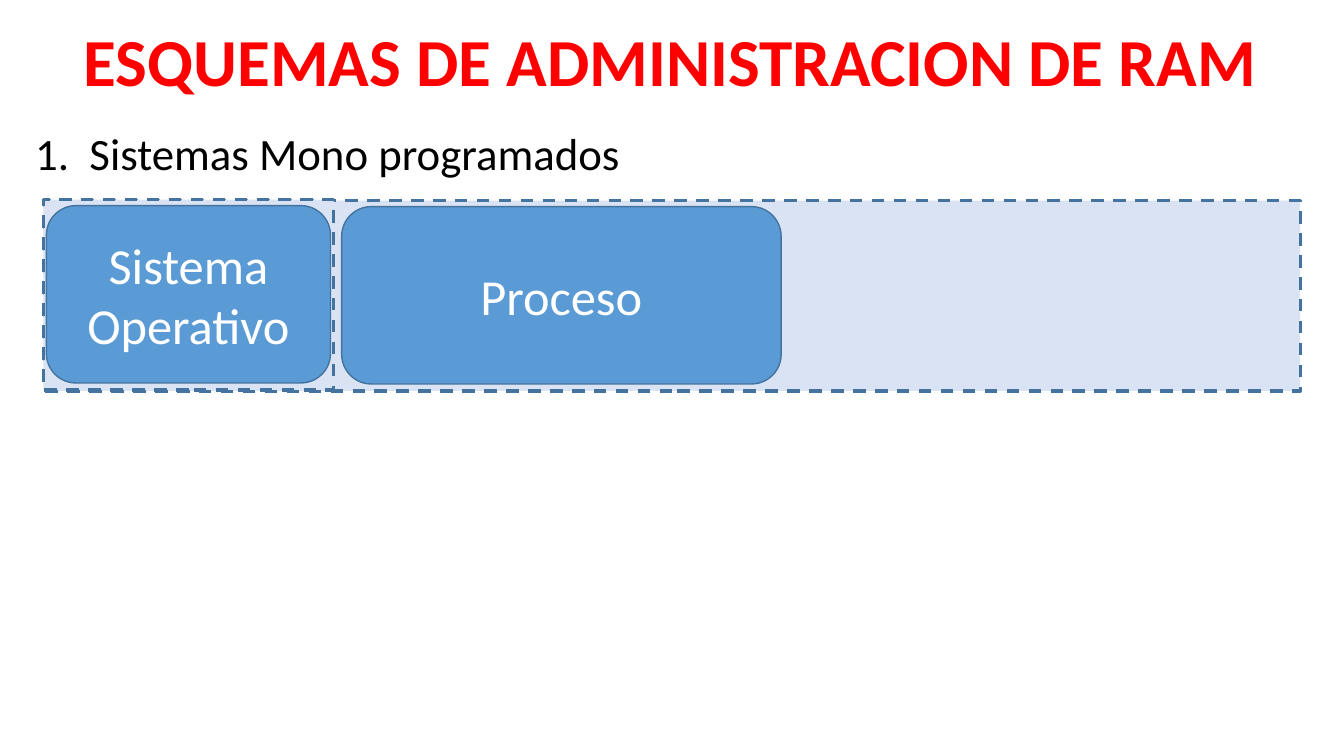
from pptx import Presentation
from pptx.dml.color import RGBColor as RGB
from pptx.enum.dml import MSO_LINE as Dash
from pptx.enum.shapes import MSO_SHAPE as Shape
from pptx.enum.text import MSO_ANCHOR as Anchor, PP_ALIGN as Align
from pptx.util import Pt

RED = RGB(0xFF, 0x00, 0x00)
BLACK = RGB(0x00, 0x00, 0x00)
WHITE = RGB(0xFF, 0xFF, 0xFF)
PALE = RGB(0xDA, 0xE3, 0xF3)
BLUE = RGB(0x5B, 0x9B, 0xD5)
EDGE = RGB(0x43, 0x73, 0x9E)

HEAD = {"name": "Calibri", "size": Pt(48), "bold": True}
BODY = {"name": "Calibri", "size": Pt(32)}
LABEL = {"name": "Calibri", "size": Pt(36)}


def write(frame, lines, style, color, align, anchor):
    frame.word_wrap = True
    frame.vertical_anchor = anchor
    for i, line in enumerate(lines):
        para = frame.add_paragraph() if i else frame.paragraphs[0]
        para.text = line
        para.alignment = align
        for key, value in style.items():
            setattr(para.font, key, value)
        para.font.color.rgb = color


def block(slide, kind, box, fill, width):
    shape = slide.shapes.add_shape(kind, *map(Pt, box))
    shape.shadow.inherit = False
    shape.fill.solid()
    shape.fill.fore_color.rgb = fill
    shape.line.color.rgb = EDGE
    shape.line.width = Pt(width)
    return shape


def heading(slide, box):
    title = slide.shapes.title
    for key, value in zip(("left", "top", "width", "height"), box):
        setattr(title, key, Pt(value))
    write(title.text_frame, ["ESQUEMAS DE ADMINISTRACION DE RAM"],
          HEAD, RED, Align.LEFT, Anchor.TOP)


def scheme(slide, box):
    item = slide.shapes.add_textbox(*map(Pt, box))
    write(item.text_frame, ["1.\tSistemas Mono programados"],
          BODY, BLACK, Align.JUSTIFY, Anchor.TOP)
    props = item.text_frame.paragraphs[0]._p.get_or_add_pPr()
    props.set("marL", str(Pt(38.8)))
    props.set("indent", str(Pt(-38.8)))


def memory(slide, box):
    left, top, width, height = box
    zones = [box, (left - 0.7, top - 0.7, 207.4, height)]
    for zone in zones:
        block(slide, Shape.RECTANGLE, zone, PALE, 2.25).line.dash_style = Dash.DASH
    parts = [
        (1.4, 3.6, 203, ["Sistema", "Operativo"]),
        (212.4, 4.3, 313.9, ["Proceso"]),
    ]
    for dx, dy, wide, lines in parts:
        place = (left + dx, top + dy, wide, 126.7)
        part = block(slide, Shape.ROUNDED_RECTANGLE, place, BLUE, 1)
        write(part.text_frame, lines, LABEL, WHITE, Align.CENTER, Anchor.MIDDLE)


def main():
    deck = Presentation()
    deck.slide_width, deck.slide_height = Pt(960), Pt(540)
    slide = deck.slides.add_slide(deck.slide_layouts[5])
    heading(slide, (52.6, 10.1, 874, 65.5))
    scheme(slide, (18, 86.4, 908.6, 46))
    memory(slide, (31.7, 143.3, 897.1, 136))
    deck.save("out.pptx")


if __name__ == "__main__":
    main()
